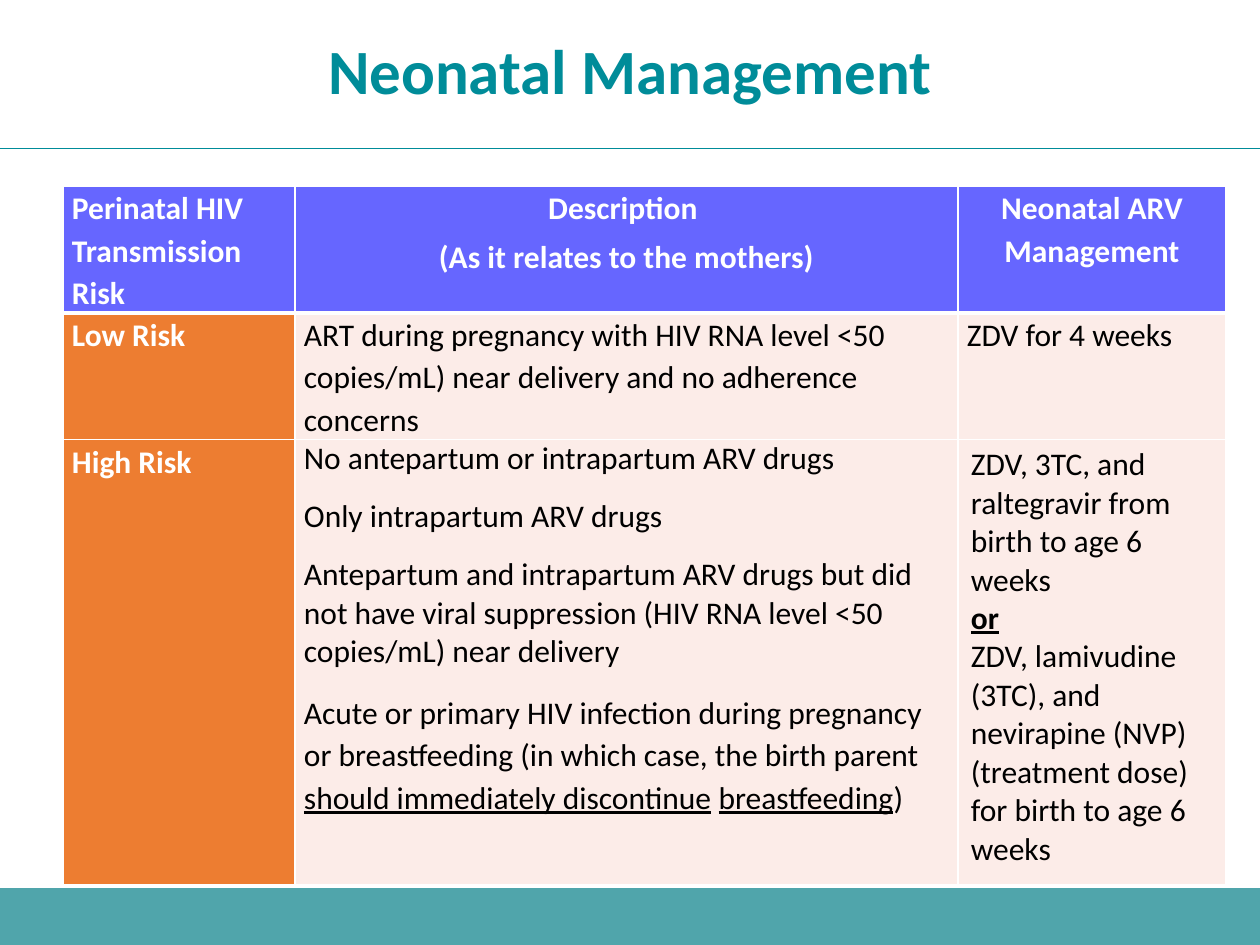
from pptx import Presentation
from pptx.dml.color import RGBColor as Rgb
from pptx.enum.shapes import MSO_CONNECTOR as Conn, MSO_SHAPE as Kind
from pptx.enum.text import MSO_ANCHOR as Anchor, PP_ALIGN as Align
from pptx.oxml.ns import qn
from pptx.util import Emu, Pt
from lxml.etree import SubElement as Sub

HUES = {"teal": "008C99", "band": "50A5AB", "head": "6666FF", "risk": "ED7D31",
        "pale": "FCECE8", "white": "FFFFFF", "black": "000000"}
LOOSE = {"line": 1.1, "after": 3.5}
LIST = {"after": 11.2}
COLS = [232, 663, 268]
ROWS = [111, 111, 445]
CELLS = [
    [[("Perinatal HIV Transmission Risk", LOOSE)],
     [("Description ", LOOSE), ("(As it relates to the mothers)", LOOSE)],
     [("Neonatal ARV Management", LOOSE)]],
    [[("Low Risk", LOOSE)],
     [("ART during pregnancy with HIV RNA level <50 copies/mL) near delivery "
       "and no adherence concerns", LOOSE)],
     [("ZDV for 4 weeks", LOOSE)]],
    [[("High Risk", LOOSE)],
     [("No antepartum or intrapartum ARV drugs", LIST),
      ("Only intrapartum ARV drugs", LIST),
      ("Antepartum and intrapartum ARV drugs but did not have viral suppression "
       "(HIV RNA level <50 copies/mL) near delivery", LIST),
      ("Acute or primary HIV infection during pregnancy or breastfeeding (in which "
       "case, the birth parent _should immediately discontinue_ _breastfeeding_)", LOOSE)],
     [("ZDV, 3TC, and raltegravir from birth to age 6 weeks", {}),
      ("_or_", {"bold": True}),
      ("ZDV, lamivudine (3TC), and nevirapine (NVP) (treatment dose) for birth "
       "to age 6 weeks", {})]],
]


def px(num):
    return Emu(round(num * 914400 / 126))


def hue(name):
    return Rgb.from_string(HUES[name])


def write(para, text, size=18, color="black", bold=False, align=Align.LEFT,
          line=1.0, after=0):
    para.alignment, para.line_spacing = align, line
    para.space_before, para.space_after = Pt(0), Pt(after)
    for num, part in enumerate(text.split("_")):
        if part:
            run = para.add_run()
            run.text = part
            font = run.font
            font.name, font.size, font.bold = "Calibri", Pt(size), bold
            font.underline = num % 2 == 1
            font.color.rgb = hue(color)


class Deck:
    """Holds the style and the current slide."""

    def __init__(self):
        self.show = Presentation()
        self.show.slide_width, self.show.slide_height = px(1260), px(945)
        self.slide = self.show.slides.add_slide(self.show.slide_layouts[5])
        self.shapes = self.slide.shapes

    def band(self, *box):
        shape = self.shapes.add_shape(Kind.RECTANGLE, *map(px, box))
        shape.shadow.inherit = False
        shape.fill.solid()
        shape.fill.fore_color.rgb = hue("band")
        shape.line.fill.background()

    def rule(self, *ends):
        line = self.shapes.add_connector(Conn.STRAIGHT, *map(px, ends))
        line.line.color.rgb, line.line.width = hue("teal"), Pt(0.5)
        Sub(line._element.spPr, qn("a:effectLst"))

    def title(self, text, *box):
        shape = self.shapes.title
        shape.left, shape.top, shape.width, shape.height = map(px, box)
        shape.text_frame.vertical_anchor = Anchor.MIDDLE
        write(shape.text_frame.paragraphs[0], text, size=36, color="teal",
              bold=True, align=Align.CENTER, line=0.9)

    def edge(self, cell, **widths):
        props = cell._tc.get_or_add_tcPr()
        for side, width in widths.items():
            line = Sub(props, qn(f"a:ln{side}"), w=str(Pt(width)))
            Sub(Sub(line, qn("a:solidFill")), qn("a:srgbClr"), val=HUES["white"])

    def cell(self, cell, paras, row, col):
        self.edge(cell, L=1, R=1, T=3 if row == 1 else 1, B=1 if row else 3)
        side, end = (13, 6) if (row, col) == (2, 2) else (9, 0)
        cell.margin_left = cell.margin_right = px(side)
        cell.margin_top = cell.margin_bottom = px(end)
        strong = row == 0 or col == 0
        base = {"color": "white" if strong else "black", "bold": strong,
                "align": Align.CENTER if row == 0 and col else Align.LEFT}
        cell.fill.solid()
        cell.fill.fore_color.rgb = hue("pale" if not strong else "risk" if row else "head")
        frame = cell.text_frame
        for num, (text, style) in enumerate(paras):
            para = frame.add_paragraph() if num else frame.paragraphs[0]
            write(para, text, **{**base, **style})

    def table(self, left, top):
        box = map(px, (left, top, sum(COLS), sum(ROWS)))
        table = self.shapes.add_table(len(ROWS), len(COLS), *box).table
        table.first_row = table.horz_banding = False
        for col, width in zip(table.columns, COLS):
            col.width = px(width)
        for row, height in zip(table.rows, ROWS):
            row.height = px(height)
        for row, line in enumerate(CELLS):
            for col, paras in enumerate(line):
                self.cell(table.cell(row, col), paras, row, col)


def main():
    deck = Deck()
    deck.band(0, 888, 1260, 57)
    deck.rule(0, 148, 1260, 148)
    deck.title("Neonatal Management", 0, 0, 1260, 148)
    deck.table(63, 186)
    deck.show.save("out.pptx")


if __name__ == "__main__":
    main()
